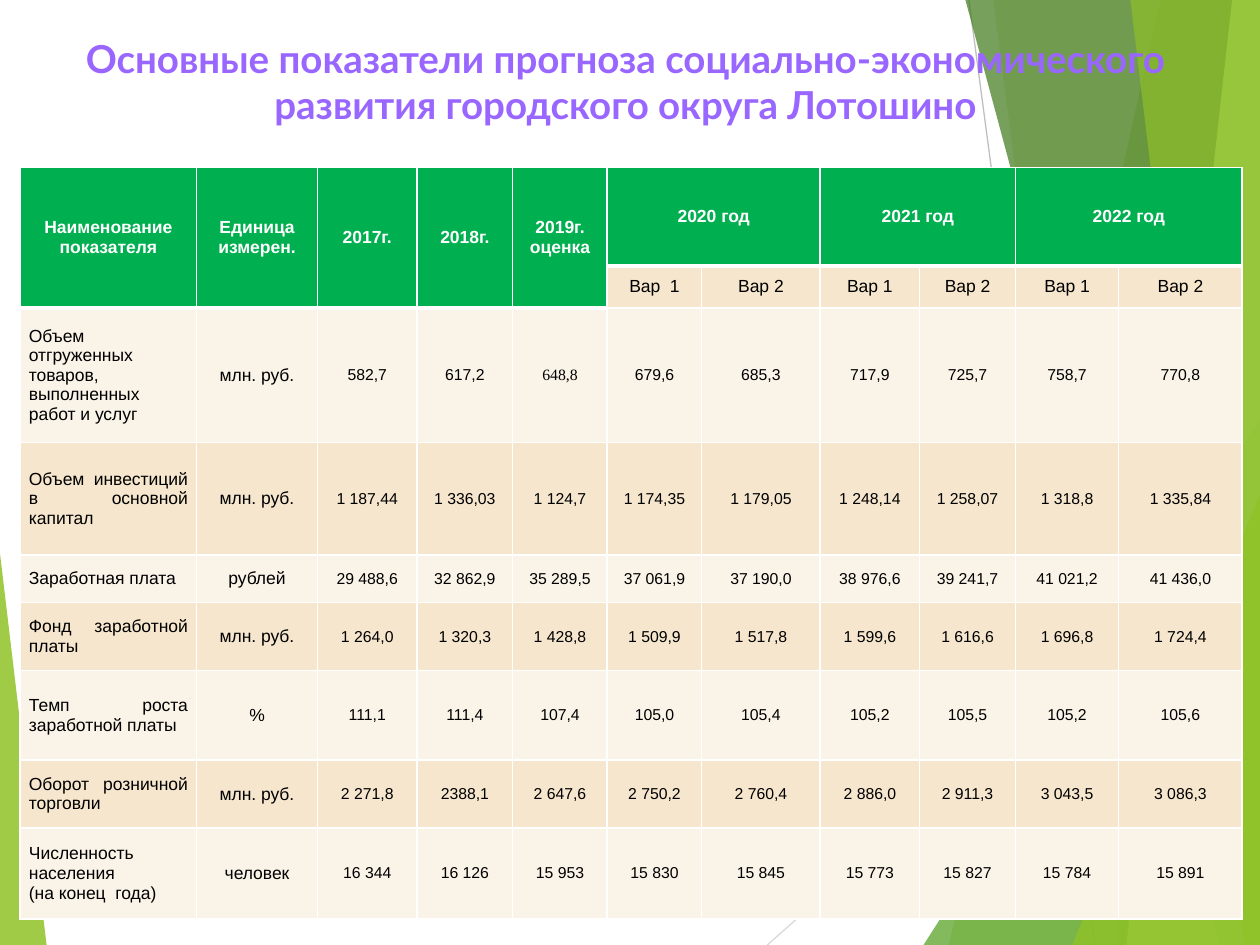
from lxml import etree
from pptx import Presentation, util as u
from pptx.dml.color import RGBColor
from pptx.enum import shapes, text
from pptx.oxml.ns import qn

HUE = {
    "white": "FFFFFF", "black": "000000", "title": "9966FF",
    "head": "00B050", "dark": "F5E6CD", "pale": "FAF3E8",
    "lime": "90C226", "leaf": "54A021", "moss": "3F7819", "mint": "C0E474",
    "gray": "BFBFBF", "mist": "D9D9D9",
}


def paint(shape, hue, alpha):
    """Fill a shape with a see-through colour, without line or shadow."""
    shape.shadow.inherit = False
    shape.line.fill.background()
    shape.fill.solid()
    shape.fill.fore_color.rgb = RGBColor.from_string(HUE[hue])
    clr = shape.fill._xPr.find(".//" + qn("a:srgbClr"))
    etree.SubElement(clr, qn("a:alpha"), val=str(alpha * 1000))


def edge(cell, side, width):
    """Draw one white border of a table cell."""
    line = etree.SubElement(cell._tc.get_or_add_tcPr(), qn("a:ln" + side),
                            w=str(u.Pt(width)))
    fill = etree.SubElement(line, qn("a:solidFill"))
    etree.SubElement(fill, qn("a:srgbClr"), val=HUE["white"])


deck = Presentation()
deck.slide_width, deck.slide_height = u.Inches(10), u.Inches(7.5)
slide = deck.slides.add_slide(deck.slide_layouts[6])
items = slide.shapes

# Backdrop: two thin lines, then translucent facets from back to front
for ends, hue in [((7.69, 0, 8.69, 7.5), "gray"), ((10, 4.03, 6.09, 7.5), "mist")]:
    line = items.add_connector(shapes.MSO_CONNECTOR.STRAIGHT,
                               *[u.Inches(n) for n in ends])
    line.line.color.rgb = RGBColor.from_string(HUE[hue])
    line.line.width = u.Pt(0.75)
    etree.SubElement(line._element.spPr, qn("a:effectLst"))

# A facet is (top x, bottom x) up to the right edge, or a triangle's box and apex
facets = [
    ((9.21, 7.53), "lime", 30),
    ((7.88, 8.87), "lime", 20),
    ((7.33, 3.33, 2.67, 4.17, 1), "leaf", 72),
    ((7.66, 9.68), "moss", 70),
    ((9.78, 8.94), "mint", 70),
    ((8.97, 9.88), "lime", 65),
    ((8.51, 3.93, 1.49, 3.57, 1), "lime", 80),
    ((0, 4.39, 0.37, 3.11, 0), "lime", 85),
]
for form, hue, alpha in facets:
    if len(form) == 2:
        top, low = form
        pen = items.build_freeform(u.Inches(top), u.Inches(-0.01))
        pen.add_line_segments([(u.Inches(x), u.Inches(y)) for x, y in
                               [(10, -0.01), (10, 7.5), (low, 7.5)]])
        facet = pen.convert_to_shape()
    else:
        facet = items.add_shape(shapes.MSO_SHAPE.ISOSCELES_TRIANGLE,
                                *[u.Inches(n) for n in form[:4]])
        facet.adjustments[0] = form[4]
    paint(facet, hue, alpha)

# Title
title = items.add_textbox(u.Inches(0.16), u.Inches(0.23), u.Inches(9.61), u.Inches(1.02))
title.text_frame.word_wrap = True
para = title.text_frame.paragraphs[0]
para.text = ("Основные показатели прогноза социально-экономического "
             "развития городского округа Лотошино")
para.alignment = text.PP_ALIGN.CENTER
para.font.name, para.font.size, para.font.bold = "Lato", u.Pt(22), True
para.font.color.rgb = RGBColor.from_string(HUE["title"])

# Table: "|" parts cells, a line feed parts paragraphs, \v breaks a line
rows = [
    "Наименование\nпоказателя|Единица\nизмерен.|2017г.|2018г.|2019г.\nоценка"
    "|2020 год||2021 год||2022 год|",
    "|||||Вар  1|Вар 2|Вар 1|Вар 2|Вар 1|Вар 2",
    "Объем отгруженных товаров, выполненных работ и услуг|млн. руб."
    "|582,7|617,2|648,8|679,6|685,3|717,9|725,7|758,7|770,8",
    "Объем инвестиций в основной капитал|млн. руб.|1 187,44|1 336,03|1 124,7"
    "|1 174,35|1 179,05|1 248,14|1 258,07|1 318,8|1 335,84",
    "Заработная плата|рублей|29 488,6|32 862,9|35 289,5"
    "|37 061,9|37 190,0|38 976,6|39 241,7|41 021,2|41 436,0",
    "Фонд заработной платы|млн. руб.|1 264,0|1 320,3|1 428,8"
    "|1 509,9|1 517,8|1 599,6|1 616,6|1 696,8|1 724,4",
    "Темп роста заработной платы|%|111,1|111,4|107,4"
    "|105,0|105,4|105,2|105,5|105,2|105,6",
    "Оборот розничной торговли|млн. руб.|2 271,8|2388,1|2 647,6"
    "|2 750,2|2 760,4|2 886,0|2 911,3|3 043,5|3 086,3",
    "Численность\nнаселения\v(на конец  года)|человек|16 344|16 126|15 953"
    "|15 830|15 845|15 773|15 827|15 784|15 891",
]
wide = [1.4, 0.96, 0.79, 0.76, 0.75, 0.75, 0.94, 0.79, 0.76, 0.82, 0.98]
tall = [0.78, 0.19, 1.07, 0.89, 0.38, 0.54, 0.71, 0.54, 0.72]
grid = items.add_table(len(tall), len(wide), u.Inches(0.16), u.Inches(1.33),
                       u.Inches(9.69), u.Inches(5.81)).table
grid.horz_banding = False
for col, size in zip(grid.columns, wide):
    col.width = u.Inches(size)
for row, size in zip(grid.rows, tall):
    row.height = u.Inches(size)

for r, row in enumerate(rows):
    for c, words in enumerate(row.split("|")):
        cell = grid.cell(r, c)
        head = r == 0 or (r == 1 and c < 5)
        under = not head and r == (2 if c < 5 else 1)
        for side, width in [("L", 1), ("R", 1), ("T", 3 if under else 1),
                            ("B", 3 if head else 1)]:
            edge(cell, side, width)
        cell.margin_left = cell.margin_right = u.Inches(0.07)
        cell.margin_top = cell.margin_bottom = 0
        cell.vertical_anchor = text.MSO_ANCHOR.MIDDLE
        cell.fill.solid()
        hue = "head" if head else "dark" if r % 2 else "pale"
        cell.fill.fore_color.rgb = RGBColor.from_string(HUE[hue])
        if not words:
            continue
        cell.text = words
        for para in cell.text_frame.paragraphs:
            label = r > 1 and c == 0
            para.alignment = text.PP_ALIGN.JUSTIFY if label else text.PP_ALIGN.CENTER
            font = para.font
            font.name = "Times New Roman" if words == "648,8" else "Arial"
            font.size = u.Pt(9 if r > 1 and c > 1 else 10)
            font.bold = head
            font.color.rgb = RGBColor.from_string(HUE["white" if head else "black"])

for c in range(5):
    grid.cell(0, c).merge(grid.cell(1, c))
for c in (5, 7, 9):
    grid.cell(0, c).merge(grid.cell(0, c + 1))

deck.save("out.pptx")
